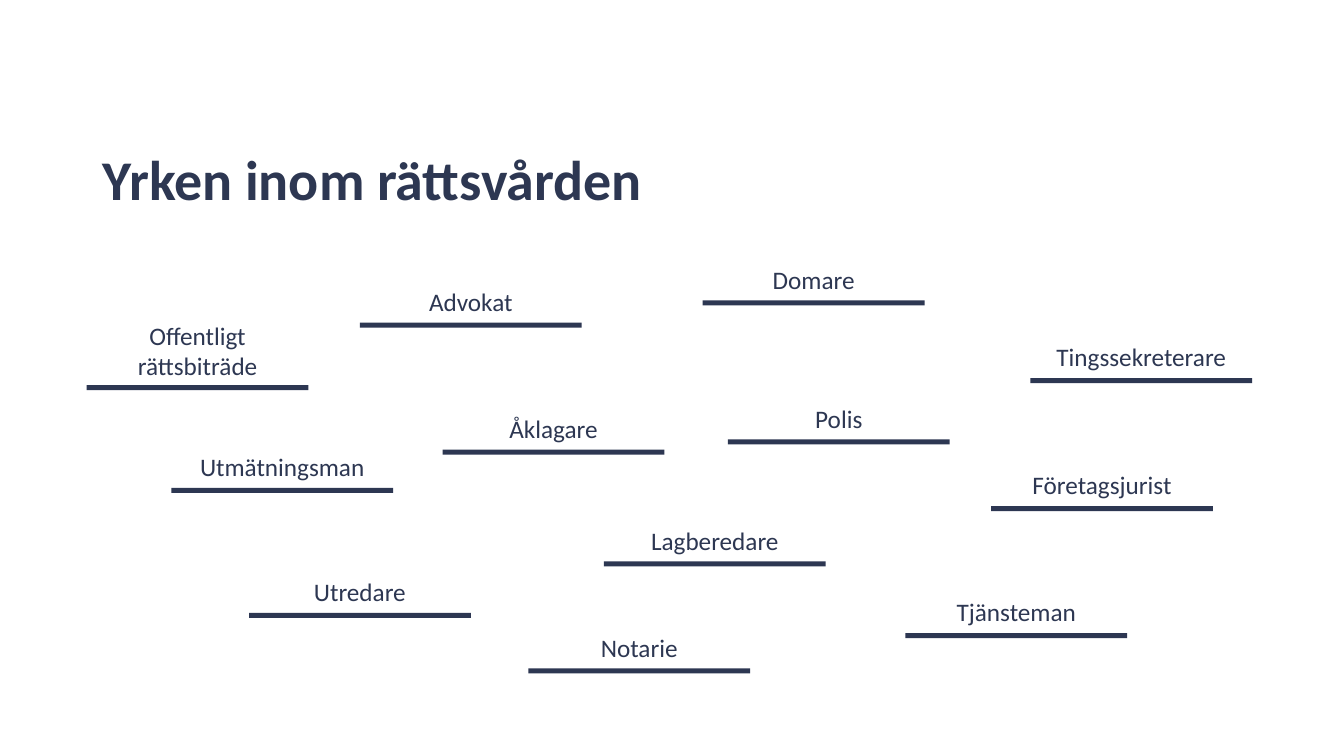
from pptx import Presentation
from pptx.dml.color import RGBColor
from pptx.enum.shapes import MSO_SHAPE
from pptx.enum.text import MSO_ANCHOR, MSO_AUTO_SIZE, PP_ALIGN
from pptx.util import Pt

RECT = MSO_SHAPE.RECTANGLE
MIDDLE = MSO_ANCHOR.MIDDLE
NO_FIT, GROW = MSO_AUTO_SIZE.NONE, MSO_AUTO_SIZE.SHAPE_TO_FIT_TEXT
LEFT, CENTER = PP_ALIGN.LEFT, PP_ALIGN.CENTER

TITLE = "Yrken inom rättsvården"
# Job, left edge, top of its bar, lines of text
JOBS = [
    ("Offentligt rättsbiträde", 86, 382, 2),
    ("Advokat", 357, 320, 1),
    ("Utmätningsman", 170, 484, 1),
    ("Utredare", 247, 608, 1),
    ("Domare", 697, 298, 1),
    ("Tingssekreterare", 1022, 375, 1),
    ("Tjänsteman", 898, 628, 1),
    ("Notarie", 524, 663, 1),
    ("Åklagare", 439, 446, 1),
    ("Företagsjurist", 983, 502, 1),
    ("Lagberedare", 599, 557, 1),
    ("Polis", 722, 436, 1),
]
COLORS = {"navy": "2D3752"}
FONT = "Calibri"
SCALE = 9144  # EMU per px, 100 px to the inch
JOB_W, BAR_H = 220, 5
LABEL_H = {1: 40, 2: 71}
RISE = {1: 41, 2: 69}  # label top above bar top, by lines


def px(*sizes):
    return [size * SCALE for size in sizes]


def style(para, size, align, bold=False):
    para.alignment = align
    font = para.font
    font.name, font.size, font.bold = FONT, Pt(size), bold
    font.color.rgb = RGBColor.from_string(COLORS["navy"])


def add_title(slide):
    title = slide.shapes.title
    title.left, title.top, title.width, title.height = px(92, 108, 1150, 145)
    frame = title.text_frame
    frame.text = TITLE
    frame.auto_size = NO_FIT
    frame.vertical_anchor = MIDDLE
    para = frame.paragraphs[0]
    para.line_spacing = 0.9
    style(para, 40, LEFT, bold=True)


def add_job(slide, name, left, top, lines):
    """Add a job's label with the bar under it."""
    label = slide.shapes.add_textbox(
        *px(left, top - RISE[lines], JOB_W, LABEL_H[lines]))
    frame = label.text_frame
    frame.text = name
    frame.word_wrap = True
    frame.auto_size = GROW
    style(frame.paragraphs[0], 18, CENTER)

    bar = slide.shapes.add_shape(RECT, *px(left, top, JOB_W, BAR_H))
    bar.shadow.inherit = False
    bar.fill.solid()
    bar.fill.fore_color.rgb = RGBColor.from_string(COLORS["navy"])
    bar.line.fill.background()


def main():
    deck = Presentation()
    deck.slide_width, deck.slide_height = px(1333, 750)
    slide = deck.slides.add_slide(deck.slide_layouts.get_by_name("Title Only"))
    add_title(slide)
    for job in JOBS:
        add_job(slide, *job)
    deck.save("out.pptx")


if __name__ == "__main__":
    main()
